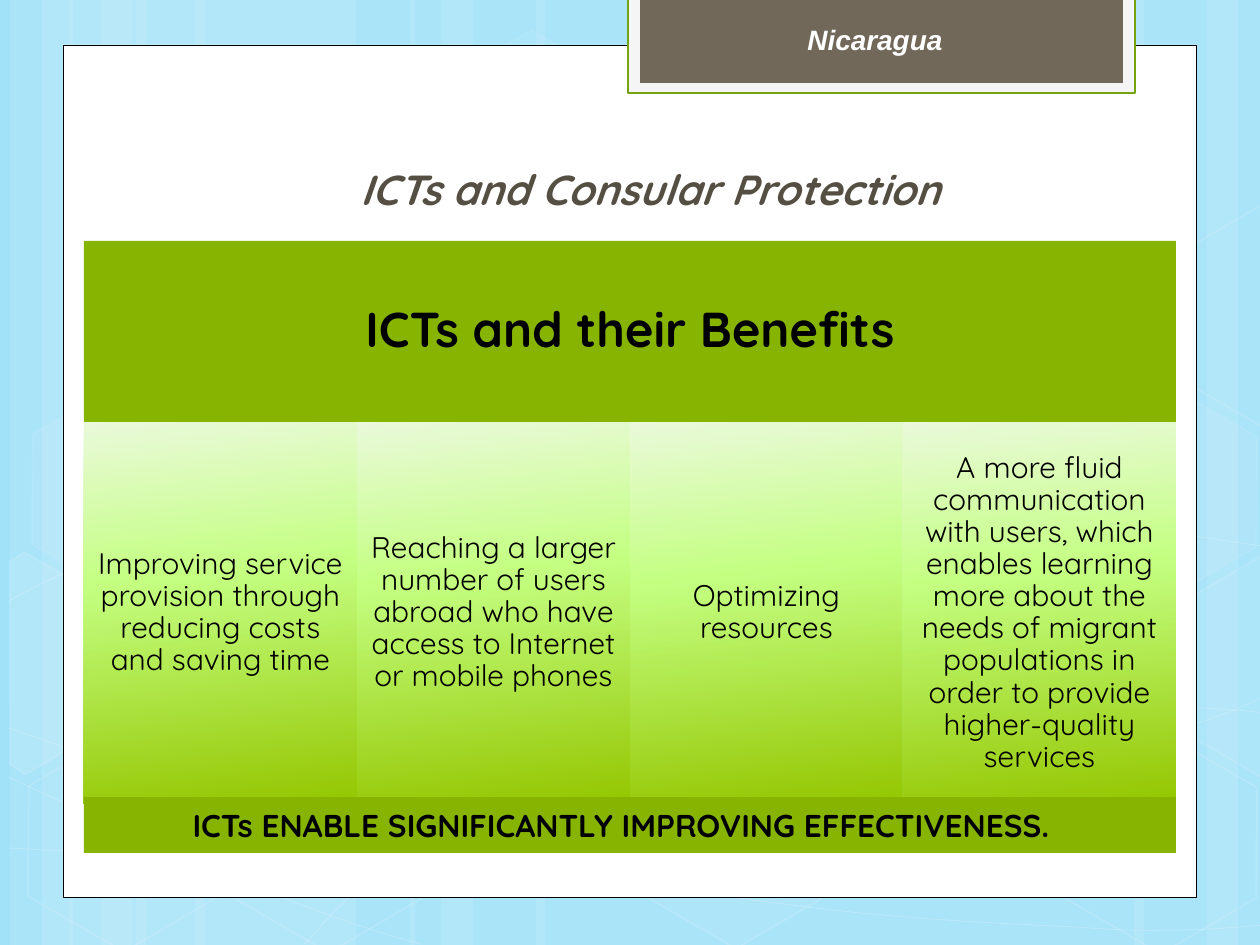
"""Builds the slide on ICTs and consular protection."""
import dataclasses

import pptx
import pptx.dml.color
import pptx.enum.shapes
import pptx.enum.text
import pptx.oxml
import pptx.oxml.ns
import pptx.util

SCALE = 914400 / 126
ANCHOR = pptx.enum.text.MSO_ANCHOR
SHAPE = pptx.enum.shapes.MSO_SHAPE


@dataclasses.dataclass(frozen=True)
class Theme:
    """Colours, fonts and type sizes."""
    sky: str = "A1E2F9"
    white: str = "FFFFFF"
    black: str = "000000"
    tab_frame: str = "F5F5F5"
    tab_line: str = "74A510"
    tab: str = "71685A"
    title: str = "554E43"
    green: str = "86B400"
    gradient: tuple = ((0, "EAF9DA"), (40, "C4FF82"), (100, "94C600"))
    angle: int = 84
    font: str = "Quicksand"
    tab_font: str = "Arial"
    heading_size: int = 28
    title_size: int = 24
    footer_size: int = 18
    column_size: int = 17
    tab_size: int = 16


THEME = Theme()
STRIPES = ((136, 220), (10, 63), (42, 104), (195, 220), (69, 63), (101, 104),
           (924, 220), (1207, 63), (1134, 104), (536, 388), (410, 63), (441, 104))
CURVES = (
    ((9, 848), (77, 852), (145, 856), (239, 854), (334, 853), (451, 851), (577, 838),
     (704, 825), (882, 801), (998, 777), (1113, 753), (1231, 716), (1269, 694)),
    ((9, 601), (45, 581), (82, 562), (152, 543), (224, 524), (326, 496), (437, 488),
     (553, 480), (685, 478), (824, 488), (963, 498), (1193, 537), (1269, 547)),
    ((8, 777), (160, 847), (311, 916), (421, 944)),
    ((9, 728), (48, 742), (88, 756), (161, 776), (234, 795), (344, 827), (450, 848),
     (554, 869), (687, 892), (791, 905), (896, 919), (1008, 924), (1075, 927),
     (1140, 932), (1158, 930), (1191, 930), (1223, 929), (1246, 926), (1269, 925)),
    ((305, 944), (328, 918), (350, 893), (381, 871), (412, 848), (454, 823), (489, 805),
     (524, 788), (546, 780), (592, 767), (638, 754), (722, 737), (766, 728),
     (811, 719), (818, 719), (857, 717), (896, 713), (958, 709), (1000, 708),
     (1045, 707), (1116, 708), (1116, 708), (1144, 708), (1172, 708), (1201, 708),
     (1223, 709), (1245, 711), (1256, 712), (1265, 713), (1264, 712), (1268, 713)),
)
HEXAGONS = ((421, 45, 4, 8), (626, 742, 6, 12), (14, 745, 0, 12), (18, 393, 7, 8),
            (219, 746, 0, 12), (1051, 747, 0, 12), (1051, 396, 7, 8))
LEFT_CUT = ((0, 16), (8, 1), (119, 0), (174, 97), (120, 193), (102, 192))
RIGHT_CUT = ((0, 95), (54, 0), (65, 0), (170, 182), (166, 191), (55, 191))
CUT_HEXAGONS = ((-42, 578, LEFT_CUT, 10), (1155, 559, RIGHT_CUT, 4),
                (1155, 208, RIGHT_CUT, 0))
BENEFITS = (
    "Improving service provision through reducing costs and saving time",
    "Reaching a larger number of users abroad who have access to Internet or mobile phones",
    "Optimizing resources",
    "A more fluid communication with users, which enables learning more about the needs of "
    "migrant populations in order to provide higher-quality services",
)


def px(length):
    """Turn px into EMU."""
    return pptx.util.Emu(round(length * SCALE))


def rgb(colour):
    """Turn a hex string into a colour."""
    return pptx.dml.color.RGBColor.from_string(colour)


def fade(shape, route, opacity):
    """Set the opacity in percent of the colour found along the route."""
    colour = shape._element.spPr.find(route, pptx.oxml.ns._nsmap)
    alpha = colour.makeelement(pptx.oxml.ns.qn("a:alpha"), {"val": str(opacity * 1000)})
    colour.append(alpha)


def paint(shape, fill=None, line=None, width=1, fill_opacity=100, line_opacity=100):
    """Give a shape its fill and outline, without a shadow."""
    shape.shadow.inherit = False
    if fill:
        shape.fill.solid()
        shape.fill.fore_color.rgb = rgb(fill)
        if fill_opacity < 100:
            fade(shape, "a:solidFill/a:srgbClr", fill_opacity)
    else:
        shape.fill.background()
    if line:
        shape.line.color.rgb = rgb(line)
        shape.line.width = pptx.util.Pt(width)
        if line_opacity < 100:
            fade(shape, "a:ln/a:solidFill/a:srgbClr", line_opacity)
    else:
        shape.line.fill.background()


def add_box(page, box, kind=SHAPE.RECTANGLE, **look):
    """Add a painted preset shape."""
    shape = page.shapes.add_shape(kind, *map(px, box))
    paint(shape, **look)
    return shape


def add_outline(page, left, top, points, closed, **look):
    """Add a painted freeform through the points, measured from left and top."""
    places = [(left + x, top + y) for x, y in points]
    builder = page.shapes.build_freeform(*places[0], scale=SCALE)
    builder.add_line_segments(places[1:], close=closed)
    shape = builder.convert_to_shape()
    paint(shape, **look)
    return shape


def bend(shape):
    """Join each three line segments of a freeform into one cubic curve."""
    name = pptx.oxml.ns.qn
    lines = list(shape._element.spPr.iter(name("a:lnTo")))
    for first in range(0, len(lines), 3):
        curve = lines[first].makeelement(name("a:cubicBezTo"), {})
        lines[first].addprevious(curve)
        for line in lines[first:first + 3]:
            curve.append(line[0])
            line.getparent().remove(line)


def write(shape, text, size, colour, font=THEME.font, bold=True, italic=False,
          anchor=ANCHOR.MIDDLE, inset=None):
    """Write one centred paragraph into a shape and return it."""
    frame = shape.text_frame
    frame.text = text
    frame.word_wrap = True
    frame.auto_size = pptx.enum.text.MSO_AUTO_SIZE.NONE
    frame.vertical_anchor = anchor
    if inset:
        frame.margin_left = frame.margin_right = px(inset)
        frame.margin_top = frame.margin_bottom = px(inset)
    para = frame.paragraphs[0]
    para.alignment = pptx.enum.text.PP_ALIGN.CENTER
    span = para.runs[0].font
    span.name, span.size, span.color.rgb = font, pptx.util.Pt(size), rgb(colour)
    span.bold, span.italic = bold, italic
    return para


def place(page, placeholder, box):
    """Move a placeholder to the box and to the front."""
    placeholder.left, placeholder.top, placeholder.width, placeholder.height = map(px, box)
    page.shapes._spTree.append(placeholder._element)


def draw_backdrop(page, box):
    """Draw the sky with stripes, curves and hexagons."""
    left, top, _, height = box
    page.background.fill.solid()
    page.background.fill.fore_color.rgb = rgb(THEME.sky)
    for offset, width in STRIPES:
        add_box(page, (left + offset, top, width, height), fill=THEME.white, fill_opacity=10)
    for knots in CURVES:
        bend(add_outline(page, left, top, knots, False, line=THEME.white, width=0.5,
                         line_opacity=20))
    for x, y, fill_opacity, line_opacity in HEXAGONS:
        hexagon = add_box(page, (left + x, top + y, 220, 192), SHAPE.HEXAGON,
                          fill=THEME.white if fill_opacity else None, line=THEME.white,
                          fill_opacity=fill_opacity, line_opacity=line_opacity)
        hexagon.adjustments[0], hexagon.adjustments[1] = 0.285, 1.155
        hexagon.rotation = 30
    for x, y, corners, opacity in CUT_HEXAGONS:
        cut = add_outline(page, left + x, top + y, corners, True,
                          fill=THEME.white if opacity else None, line=THEME.white,
                          fill_opacity=opacity, line_opacity=12)
        cut.rotation = 30


def draw_tab(page, box):
    """Draw the country tab hanging from the top edge."""
    left, top, width, height = box
    add_box(page, box, fill=THEME.tab_frame, line=THEME.tab_line, width=1.25)
    add_box(page, (left + 12, top, width - 24, height - 10), fill=THEME.tab)
    label = page.shapes.add_textbox(*map(px, (left + 41, top + 18, 412, 47)))
    write(label, "Nicaragua", THEME.tab_size, THEME.white, THEME.tab_font,
          italic=True, anchor=ANCHOR.TOP)


def draw_title(page, box):
    """Set the slide title."""
    place(page, page.shapes.title, box)
    write(page.shapes.title, "ICTs and Consular Protection", THEME.title_size, THEME.title,
          italic=True, anchor=ANCHOR.BOTTOM)


def fill_gradient(shape):
    """Replace the fill of a shape with the column gradient."""
    stops = "".join(f'<a:gs pos="{stop * 1000}"><a:srgbClr val="{colour}"/></a:gs>'
                    for stop, colour in THEME.gradient)
    gradient = pptx.oxml.parse_xml(
        f'<a:gradFill {pptx.oxml.ns.nsdecls("a")} rotWithShape="1"><a:gsLst>{stops}</a:gsLst>'
        f'<a:lin ang="{THEME.angle * 60000}" scaled="0"/></a:gradFill>')
    properties = shape._element.spPr
    properties.replace(properties.find(pptx.oxml.ns.qn("a:solidFill")), gradient)


def draw_benefits(page, box):
    """Draw the heading, the benefit columns and the closing bar."""
    left, top, width, height = box
    heading = add_box(page, (left, top, width, 181), fill=THEME.green)
    write(heading, "ICTs and their Benefits", THEME.heading_size, THEME.black,
          inset=15).line_spacing = 0.9
    step = width // len(BENEFITS)
    for index, benefit in enumerate(BENEFITS):
        column = add_box(page, (left + index * step, top + 181, step, 382), fill=THEME.white)
        fill_gradient(column)
        write(column, benefit, THEME.column_size, THEME.black, bold=False,
              inset=9).line_spacing = 0.9
    add_box(page, (left, top + height - 56, width, 56), fill=THEME.green)
    closing = page.placeholders[1]
    place(page, closing, (left, top + height - 53, width - 9, 79))
    para = write(closing, "ICTs ENABLE SIGNIFICANTLY IMPROVING EFFECTIVENESS. ",
                 THEME.footer_size, THEME.black, anchor=ANCHOR.TOP)
    para.space_before = pptx.util.Pt(4)
    properties = para._p.get_or_add_pPr()
    properties.set("marL", "0")
    properties.set("indent", "0")
    properties.append(properties.makeelement(pptx.oxml.ns.qn("a:buNone"), {}))


def main():
    """Build and save the deck."""
    deck = pptx.Presentation()
    deck.slide_width, deck.slide_height = px(1260), px(945)
    page = deck.slides.add_slide(deck.slide_layouts[1])
    draw_backdrop(page, (0, 0, 1260, 945))
    add_box(page, (63, 45, 1134, 853), fill=THEME.white, line=THEME.black, width=0.5)
    draw_tab(page, (628, -2, 507, 95))
    draw_title(page, (75, 134, 1150, 86))
    draw_benefits(page, (84, 241, 1092, 612))
    deck.save("out.pptx")


if __name__ == "__main__":
    main()
